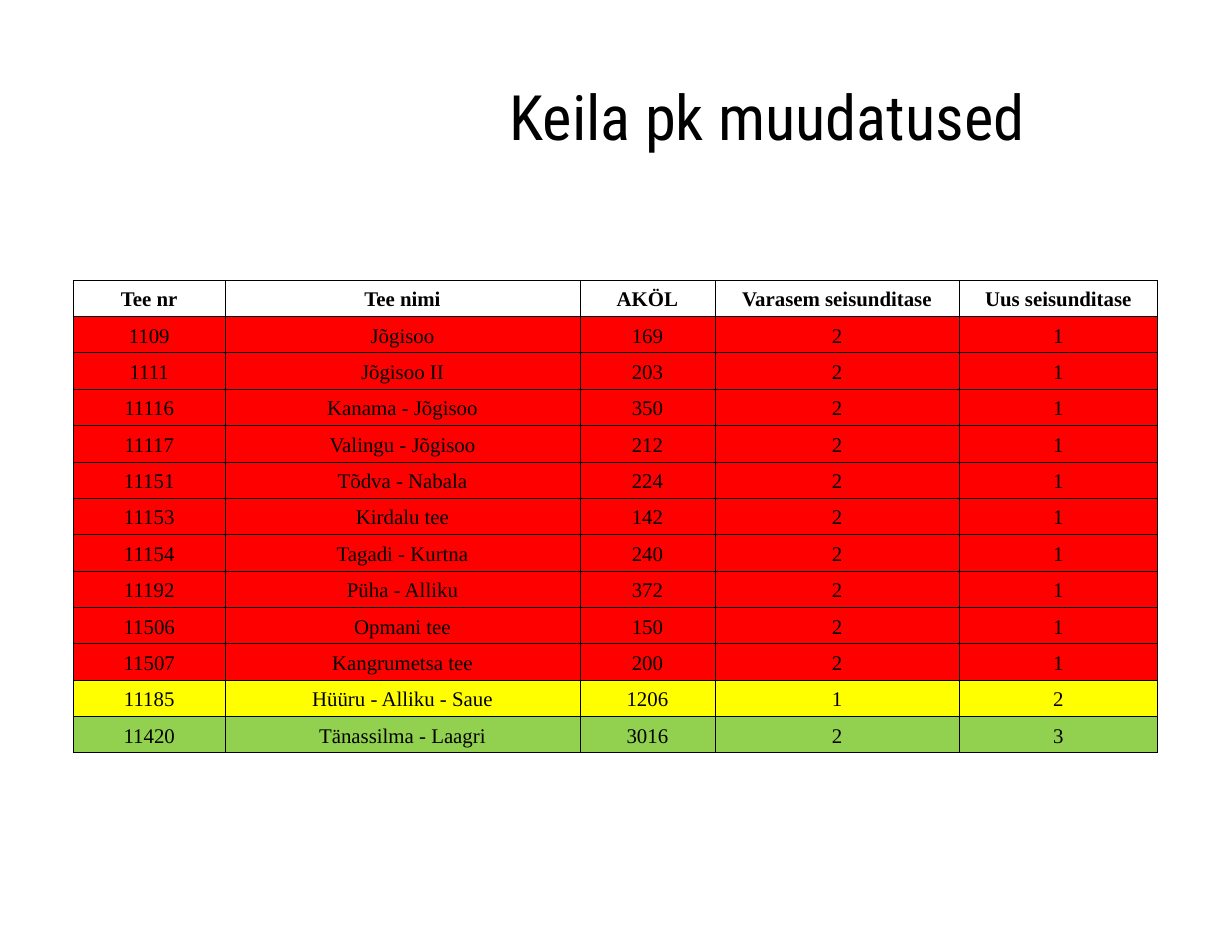
from lxml import etree
from pptx import Presentation
from pptx.dml.color import RGBColor
from pptx.enum import text
from pptx.oxml import ns
from pptx.util import Pt

BLACK = RGBColor(0x00, 0x00, 0x00)
RED = RGBColor(0xFF, 0x00, 0x00)
YELLOW = RGBColor(0xFF, 0xFF, 0x00)
GREEN = RGBColor(0x92, 0xD0, 0x50)

TITLE_FONT = "Roboto Condensed"
TABLE_FONT = "Times New Roman"

NEW_LEVEL_COLORS = {1: RED, 2: YELLOW, 3: GREEN}
COLUMN_WIDTHS = (87.3, 204.1, 77.7, 140.4, 114.3)
ROW_HEIGHT = 20.92

HEADER = ("Tee nr", "Tee nimi", "AKÖL", "Varasem seisunditase", "Uus seisunditase")
ROADS = (
    (1109, "Jõgisoo", 169, 2, 1),
    (1111, "Jõgisoo II", 203, 2, 1),
    (11116, "Kanama - Jõgisoo", 350, 2, 1),
    (11117, "Valingu - Jõgisoo", 212, 2, 1),
    (11151, "Tõdva - Nabala", 224, 2, 1),
    (11153, "Kirdalu tee", 142, 2, 1),
    (11154, "Tagadi - Kurtna", 240, 2, 1),
    (11192, "Püha - Alliku", 372, 2, 1),
    (11506, "Opmani tee", 150, 2, 1),
    (11507, "Kangrumetsa tee", 200, 2, 1),
    (11185, "Hüüru - Alliku - Saue", 1206, 1, 2),
    (11420, "Tänassilma - Laagri", 3016, 2, 3),
)


def format_paragraph(paragraph, font_name, size, bold=False):
    paragraph.alignment = text.PP_ALIGN.CENTER
    for run in paragraph.runs:
        run.font.name = font_name
        run.font.size = Pt(size)
        run.font.bold = bold
        run.font.color.rgb = BLACK


def add_title(slide, title_text):
    title = slide.shapes.title
    title.left, title.top, title.width, title.height = Pt(209.5), Pt(21.6), Pt(463.7), Pt(90)
    title.text_frame.text = title_text
    title.text_frame.vertical_anchor = text.MSO_ANCHOR.MIDDLE
    format_paragraph(title.text_frame.paragraphs[0], TITLE_FONT, 36)


def add_borders(cell):
    properties = cell._tc.get_or_add_tcPr()
    for side in ("a:lnL", "a:lnR", "a:lnT", "a:lnB"):
        line = etree.SubElement(properties, ns.qn(side), w=str(Pt(0.5)))
        fill = etree.SubElement(line, ns.qn("a:solidFill"))
        etree.SubElement(fill, ns.qn("a:srgbClr"), val=str(BLACK))


def fill_cell(cell, value, color, bold):
    """Write one value; a color of None leaves the cell unfilled."""
    add_borders(cell)
    if color is None:
        cell.fill.background()
    else:
        cell.fill.solid()
        cell.fill.fore_color.rgb = color
    cell.margin_left = cell.margin_right = cell.margin_top = Pt(0.4)
    cell.margin_bottom = Pt(0)
    cell.vertical_anchor = text.MSO_ANCHOR.MIDDLE
    cell.text_frame.text = str(value)
    paragraph = cell.text_frame.paragraphs[0]
    paragraph.line_spacing = 1.1
    format_paragraph(paragraph, TABLE_FONT, 12, bold)


def add_road_table(slide):
    rows = (HEADER, *ROADS)
    table = slide.shapes.add_table(
        len(rows), len(HEADER), Pt(42.2), Pt(161.2),
        Pt(sum(COLUMN_WIDTHS)), Pt(ROW_HEIGHT * len(rows))).table
    table.horz_banding = False
    for column, width in zip(table.columns, COLUMN_WIDTHS):
        column.width = Pt(width)
    for row, values in zip(table.rows, rows):
        row.height = Pt(ROW_HEIGHT)
        color = NEW_LEVEL_COLORS.get(values[-1])
        for cell, value in zip(row.cells, values):
            fill_cell(cell, value, color, bold=values is HEADER)


def main():
    presentation = Presentation()
    presentation.slide_width = Pt(708.66)
    presentation.slide_height = Pt(538.58)
    slide = presentation.slides.add_slide(presentation.slide_layouts.get_by_name("Title Only"))
    add_title(slide, "Keila pk muudatused")
    add_road_table(slide)
    presentation.save("out.pptx")


if __name__ == "__main__":
    main()
